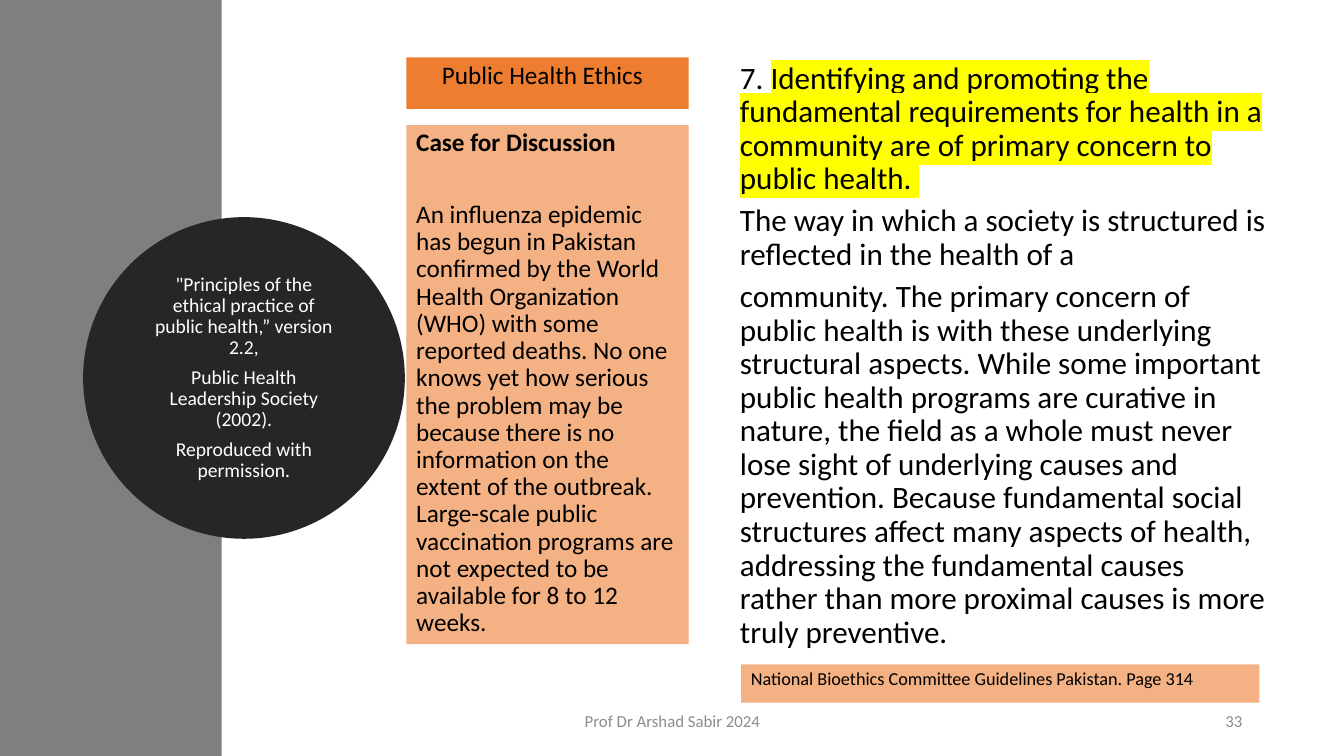
from dataclasses import dataclass
from typing import Optional

from lxml import etree
from pptx import Presentation
from pptx.dml.color import RGBColor
from pptx.enum import shapes, text
from pptx.oxml.ns import qn
from pptx.util import Inches, Pt

COLORS = {
    "band": "7F7F7F", "disc": "262626", "head": "ED7D31", "card": "F4B183",
    "white": "FFFFFF", "black": "000000", "foot": "8C8C8C", "mark": "FFFF00",
}
RECT = shapes.MSO_SHAPE.RECTANGLE
OVAL = shapes.MSO_SHAPE.OVAL
LEFT, MID, RIGHT = text.PP_ALIGN.LEFT, text.PP_ALIGN.CENTER, text.PP_ALIGN.RIGHT
TOP, CENTER = text.MSO_ANCHOR.TOP, text.MSO_ANCHOR.MIDDLE


@dataclass
class Box:
    at: tuple[float, float, float, float]
    lines: tuple[str, ...] = ()
    size: float = 18
    fill: Optional[str] = None
    kind: shapes.MSO_SHAPE = RECT
    ink: str = "black"
    align: text.PP_ALIGN = LEFT
    anchor: text.MSO_ANCHOR = TOP
    lead: float = 0.9
    after: float = 6


TITLE = Box((4.03, 0.57, 2.8, 0.51), ("Public Health Ethics",), fill="head", align=MID)
BAND = Box((0, 0, 2.2, 7.5), fill="band")
DISC = Box((0.92, 2.25, 3, 3), (
    "\"Principles of the ethical practice of public health,” version 2.2,",
    "Public Health Leadership Society (2002).",
    "Reproduced with permission.",
), 14, "disc", OVAL, "white", MID, CENTER)
CASE = Box((4.03, 1.24, 2.8, 5.15), (
    "Case for Discussion",
    "An influenza epidemic has begun in Pakistan confirmed by the World Health "
    "Organization (WHO) with some reported deaths. No one knows yet how serious the "
    "problem may be because there is no information on the extent of the outbreak. "
    "Large-scale public vaccination programs are not expected to be available for "
    "8 to 12 weeks.",
), fill="card")
BODY = Box((7.24, 0.57, 5.45, 5.9), (
    "7. ",
    "The way in which a society is structured is reflected in the health of a",
    "community. The primary concern of public health is with these underlying "
    "structural aspects. While some important public health programs are curative in "
    "nature, the field as a whole must never lose sight of underlying causes and "
    "prevention. Because fundamental social structures affect many aspects of health, "
    "addressing the fundamental causes rather than more proximal causes is more truly "
    "preventive.",
), 22.2)
POINT = ("Identifying and promoting the fundamental requirements for health in a "
         "community are of primary concern to public health. ")
SOURCE = Box((7.35, 6.59, 5.14, 0.38),
             ("National Bioethics Committee Guidelines Pakistan. Page 314",), 13, "card")
FOOT = Box((4.42, 6.95, 4.5, 0.4), ("Prof Dr Arshad Sabir 2024",), 12,
           ink="foot", align=MID, anchor=CENTER, lead=1, after=0)
PAGE = Box((9.42, 6.95, 3, 0.4), ("33",), 12,
           ink="foot", align=RIGHT, anchor=CENTER, lead=1, after=0)


def color(name: str) -> RGBColor:
    return RGBColor.from_string(COLORS[name])


def write(frame, box: Box) -> None:
    frame.word_wrap = True
    frame.auto_size = text.MSO_AUTO_SIZE.NONE
    frame.vertical_anchor = box.anchor
    for i, line in enumerate(box.lines):
        para = frame.add_paragraph() if i else frame.paragraphs[0]
        para.add_run().text = line
        para.alignment = box.align
        para.line_spacing = box.lead
        para.space_before = Pt(0)
        para.space_after = Pt(box.after)
        font = para.font
        font.name, font.size = "Calibri", Pt(box.size)
        font.color.rgb = color(box.ink)


def draw(slide, box: Box):
    place = [Inches(n) for n in box.at]
    if box.fill:
        shape = slide.shapes.add_shape(box.kind, *place)
        shape.shadow.inherit = False
        shape.fill.solid()
        shape.fill.fore_color.rgb = color(box.fill)
        shape.line.fill.background()
    else:
        shape = slide.shapes.add_textbox(*place)
    write(shape.text_frame, box)
    return shape


def head(slide, box: Box) -> None:
    title = slide.shapes.title
    title.left, title.top, title.width, title.height = [Inches(n) for n in box.at]
    title.fill.solid()
    title.fill.fore_color.rgb = color(box.fill)
    write(title.text_frame, box)
    title.text_frame.margin_right = Inches(0.2)


def mark(run) -> None:
    """Highlight the run."""
    light = etree.SubElement(run.font._element, qn("a:highlight"))
    etree.SubElement(light, qn("a:srgbClr"), val=COLORS["mark"])


def main() -> None:
    deck = Presentation()
    deck.slide_width, deck.slide_height = Inches(13.33), Inches(7.5)
    slide = deck.slides.add_slide(deck.slide_layouts[5])
    head(slide, TITLE)
    draw(slide, BAND)

    disc = draw(slide, DISC)
    disc.line.color.rgb = color("disc")
    disc.line.width = Pt(13.75)

    case = draw(slide, CASE).text_frame.paragraphs[0]
    case.font.bold = True
    case.space_after = Pt(31.8)

    point = draw(slide, BODY).text_frame.paragraphs[0].add_run()
    point.text = POINT
    mark(point)

    for box in (SOURCE, FOOT, PAGE):
        draw(slide, box)
    deck.save("out.pptx")


if __name__ == "__main__":
    main()
